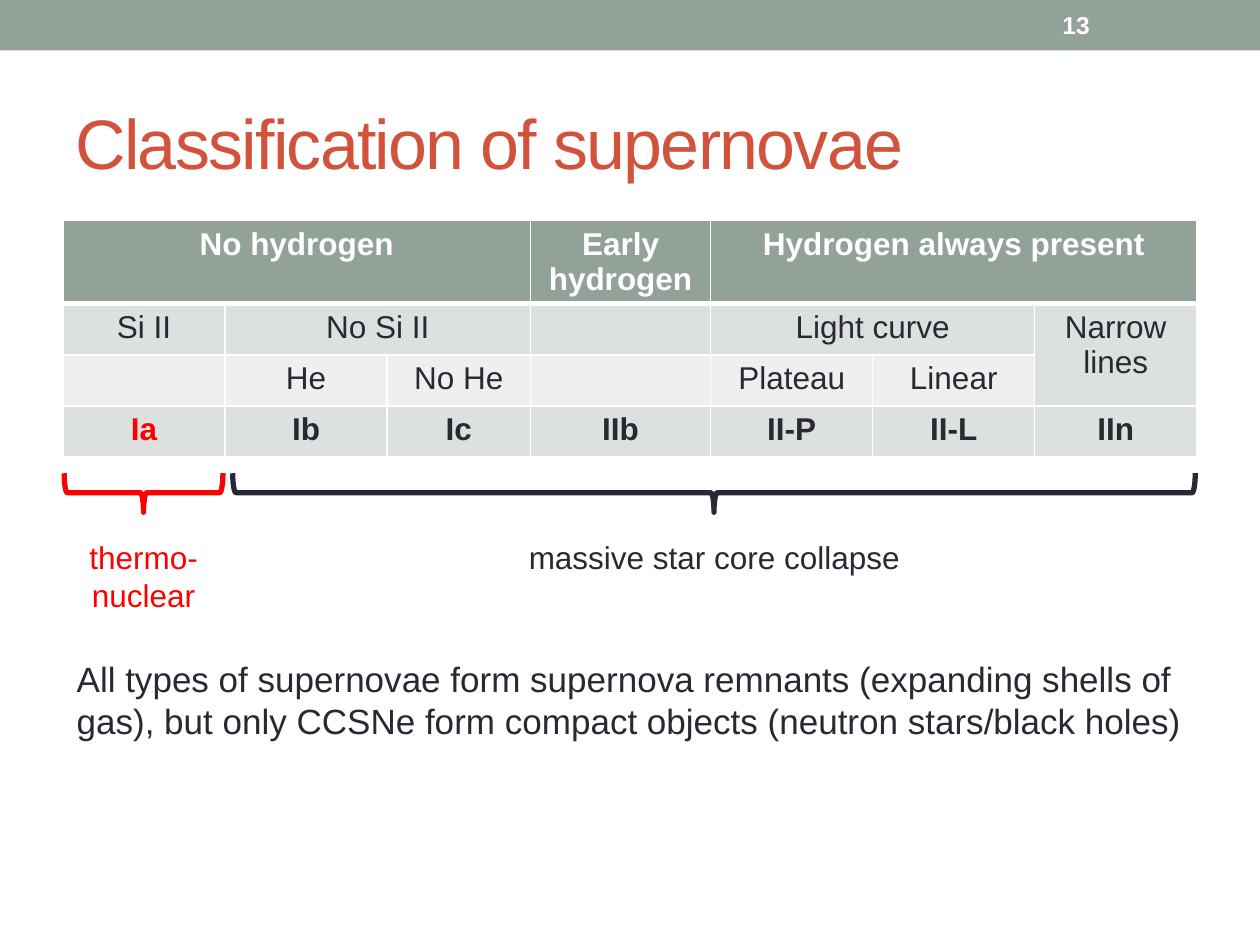
from typing import NamedTuple

from lxml import etree
from pptx import Presentation
from pptx.dml.color import RGBColor
from pptx.enum.shapes import MSO_SHAPE
from pptx.enum.text import MSO_ANCHOR, PP_ALIGN
from pptx.oxml.ns import qn
from pptx.util import Pt

RECTANGLE, LEFT_BRACE = MSO_SHAPE.RECTANGLE, MSO_SHAPE.LEFT_BRACE
TOP, MIDDLE = MSO_ANCHOR.TOP, MSO_ANCHOR.MIDDLE
LEFT, CENTER = PP_ALIGN.LEFT, PP_ALIGN.CENTER

FONT = "Arial"
WHITE = RGBColor(0xFF, 0xFF, 0xFF)
SAGE = RGBColor(0x93, 0xA2, 0x99)
SAGE_MID = RGBColor(0xDC, 0xE0, 0xDE)
SAGE_PALE = RGBColor(0xEE, 0xF0, 0xEF)
RUST = RGBColor(0xD2, 0x53, 0x3C)
INK = RGBColor(0x29, 0x29, 0x34)
RED = RGBColor(0xFF, 0x00, 0x00)

TABLE_LEFT, TABLE_TOP, ROW_HEIGHT = 36, 126, 29.2
COLUMN_WIDTHS = [92.6, 92.6, 82, 103, 92.6, 92.6, 92.6]
ROW_FILLS = [SAGE, SAGE_MID, SAGE_PALE, SAGE_MID]


class Label(NamedTuple):
    text: str
    left: float
    top: float
    width: float
    height: float
    size: float
    color: RGBColor
    align: PP_ALIGN = LEFT
    anchor: MSO_ANCHOR = TOP
    bold: bool = False
    tracking: int = 0


class Brace(NamedTuple):
    left: float
    top: float
    width: float
    height: float
    color: RGBColor


class Entry(NamedTuple):
    row: int
    col: int
    text: str
    rows: int = 1
    cols: int = 1


LABELS = [
    Label("Classification of supernovae", 36, 41.8, 648, 77.8, 40, RUST,
          anchor=MIDDLE, tracking=-100),
    Label("13", 600, 1.4, 84, 26, 14, WHITE, anchor=MIDDLE, bold=True),
    Label("thermo-nuclear", 36.7, 303.8, 90.7, 51, 18, RED, CENTER),
    Label("massive star core collapse", 133.2, 303.8, 550, 29, 18, INK, CENTER),
    Label("All types of supernovae form supernova remnants (expanding shells of "
          "gas), but only CCSNe form compact objects (neutron stars/black holes)",
          36.7, 372.2, 646.6, 55.4, 20, INK),
]

BRACES = [
    Brace(36.7, 270.4, 90.7, 22.3, RED),
    Brace(133, 270.4, 550, 22.3, INK),
]

ENTRIES = [
    Entry(0, 0, "No hydrogen", cols=3),
    Entry(0, 3, "Early hydrogen"),
    Entry(0, 4, "Hydrogen always present", cols=3),
    Entry(1, 0, "Si II"),
    Entry(1, 1, "No Si II", cols=2),
    Entry(1, 4, "Light curve", cols=2),
    Entry(1, 6, "Narrow lines", rows=2),
    Entry(2, 1, "He"),
    Entry(2, 2, "No He"),
    Entry(2, 4, "Plateau"),
    Entry(2, 5, "Linear"),
] + [Entry(3, col, name) for col, name in
     enumerate(["Ia", "Ib", "Ic", "IIb", "II-P", "II-L", "IIn"])]


def style(p, size: float, color: RGBColor, bold: bool, align: PP_ALIGN) -> None:
    p.alignment = align
    p.font.name = FONT
    p.font.size = Pt(size)
    p.font.bold = bold
    p.font.color.rgb = color


def add_label(s, label: Label) -> None:
    tf = s.shapes.add_textbox(Pt(label.left), Pt(label.top),
                              Pt(label.width), Pt(label.height)).text_frame
    tf.word_wrap = True
    tf.vertical_anchor = label.anchor
    p = tf.paragraphs[0]
    r = p.add_run()
    r.text = label.text
    style(p, label.size, label.color, label.bold, label.align)
    if label.tracking:
        r.font._element.set("spc", str(label.tracking))


def add_banner(s, width: int) -> None:
    sp = s.shapes.add_shape(RECTANGLE, 0, 0, width, Pt(28.8))
    sp.shadow.inherit = False
    sp.fill.solid()
    sp.fill.fore_color.rgb = SAGE
    sp.line.fill.background()


def add_brace(s, brace: Brace) -> None:
    left = brace.left + (brace.width - brace.height) / 2
    top = brace.top - (brace.width - brace.height) / 2
    sp = s.shapes.add_shape(LEFT_BRACE, Pt(left), Pt(top),
                            Pt(brace.height), Pt(brace.width))
    sp.rotation = 270
    sp.shadow.inherit = False
    sp.fill.background()
    sp.line.color.rgb = brace.color
    sp.line.width = Pt(3)


def set_borders(cell, row: int) -> None:
    tc_pr = cell._tc.get_or_add_tcPr()
    widths = {"lnL": 1, "lnR": 1, "lnT": 3 if row == 1 else 1,
              "lnB": 3 if row == 0 else 1}
    for side, width in widths.items():
        ln = etree.SubElement(tc_pr, qn(f"a:{side}"), w=str(Pt(width)))
        fill = etree.SubElement(ln, qn("a:solidFill"))
        etree.SubElement(fill, qn("a:srgbClr"), val=str(WHITE))


def entry_color(entry: Entry) -> RGBColor:
    if entry.row == 0:
        return WHITE
    return RED if entry.text == "Ia" else INK


def add_classification(s) -> None:
    table = s.shapes.add_table(
        len(ROW_FILLS), len(COLUMN_WIDTHS), Pt(TABLE_LEFT), Pt(TABLE_TOP),
        Pt(sum(COLUMN_WIDTHS)), Pt(ROW_HEIGHT * len(ROW_FILLS))).table
    for column, width in zip(table.columns, COLUMN_WIDTHS):
        column.width = Pt(width)
    for row, color in enumerate(ROW_FILLS):
        table.rows[row].height = Pt(ROW_HEIGHT)
        for col in range(len(COLUMN_WIDTHS)):
            cell = table.cell(row, col)
            set_borders(cell, row)
            cell.fill.solid()
            cell.fill.fore_color.rgb = color
    for entry in ENTRIES:
        cell = table.cell(entry.row, entry.col)
        if entry.rows * entry.cols > 1:
            cell.merge(table.cell(entry.row + entry.rows - 1,
                                  entry.col + entry.cols - 1))
        cell.text = entry.text
        style(cell.text_frame.paragraphs[0], 18, entry_color(entry),
              entry.row in (0, 3), CENTER)


def main() -> None:
    prs = Presentation()
    prs.slide_width, prs.slide_height = Pt(720), Pt(540)
    s = prs.slides.add_slide(prs.slide_layouts[6])
    add_banner(s, prs.slide_width)
    add_classification(s)
    for brace in BRACES:
        add_brace(s, brace)
    for label in LABELS:
        add_label(s, label)
    prs.save("out.pptx")


if __name__ == "__main__":
    main()
